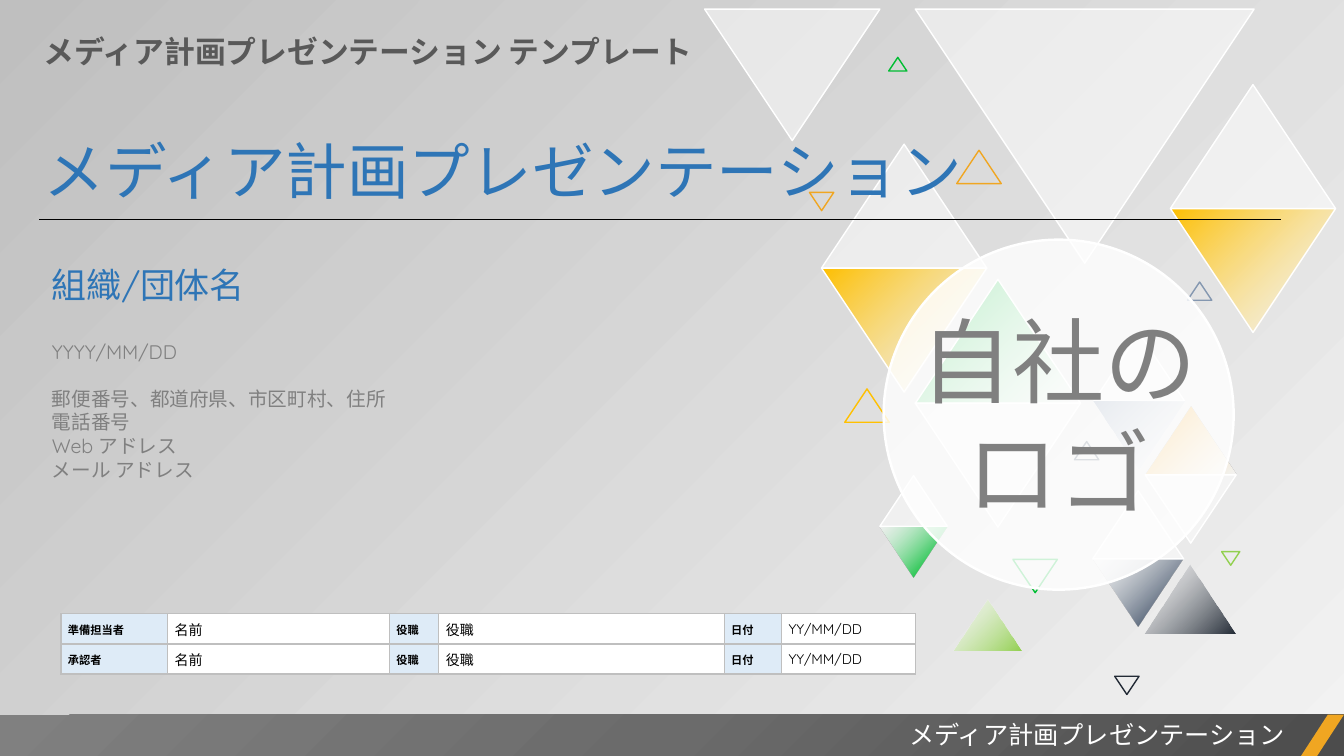
from dataclasses import dataclass

from lxml.etree import SubElement
from pptx import Presentation
from pptx.dml.color import RGBColor
from pptx.enum.shapes import MSO_CONNECTOR, MSO_SHAPE
from pptx.enum.text import MSO_ANCHOR, MSO_AUTO_SIZE, PP_ALIGN
from pptx.oxml.ns import qn
from pptx.util import Pt

TRIANGLE = MSO_SHAPE.ISOSCELES_TRIANGLE
RECT = MSO_SHAPE.RECTANGLE
SLANT = MSO_SHAPE.PARALLELOGRAM
OVAL = MSO_SHAPE.OVAL
STRAIGHT = MSO_CONNECTOR.STRAIGHT
MIDDLE = MSO_ANCHOR.MIDDLE
GROW = MSO_AUTO_SIZE.SHAPE_TO_FIT_TEXT
LEFT, CENTER, RIGHT = PP_ALIGN.LEFT, PP_ALIGN.CENTER, PP_ALIGN.RIGHT

FONT = "Quicksand"
WHITE, BLACK, GRAY, BLUE = "FFFFFF", "000000", "808080", "2E75B6"
GOLD, GREEN, AMBER, LIME = "FFC000", "00BD32", "F0A622", "92D050"
NAVY, SLATE, STEEL = "222A35", "44546A", "8497B0"


@dataclass
class Stop:
    pos: int
    tone: str
    alpha: int = 100


@dataclass
class Tri:
    x: float
    y: float
    width: float
    down: bool
    paint: tuple = ()
    edge: str = ""


@dataclass
class Line:
    text: str
    size: float
    tone: str
    bold: bool = False
    align: int = LEFT
    gap: float = 0


def color(tone: str) -> RGBColor:
    return RGBColor.from_string(tone)


def fade(tone: str) -> tuple:
    return Stop(0, tone), Stop(100, WHITE, 50)


def rise(tone: str) -> tuple:
    return Stop(0, WHITE, 50), Stop(82, tone)


def dim(node, alpha: int) -> None:
    if alpha < 100:
        SubElement(node, qn("a:alpha"), val=str(alpha * 1000))


def blend(fill, root, stops: tuple, radial: bool = False) -> None:
    fill.gradient()
    grad = next(root.iter(qn("a:gradFill")))
    for child in list(grad):
        grad.remove(child)
    group = SubElement(grad, qn("a:gsLst"))
    for stop in stops:
        node = SubElement(group, qn("a:gs"), pos=str(stop.pos * 1000))
        dim(SubElement(node, qn("a:srgbClr"), val=stop.tone), stop.alpha)
    if radial:
        way = SubElement(grad, qn("a:path"), path="circle")
        SubElement(way, qn("a:fillToRect"), l="100000", t="100000")
    else:
        SubElement(grad, qn("a:lin"), ang=str(225 * 60000), scaled="0")


def draw(slide, kind, x: float, y: float, width: float, height: float,
         paint: tuple, edge: str = "", weight: float = 1, radial: bool = False):
    shape = slide.shapes.add_shape(kind, Pt(x), Pt(y), Pt(width), Pt(height))
    shape.shadow.inherit = False
    if len(paint) > 1:
        blend(shape.fill, shape.element, paint, radial)
    elif paint:
        shape.fill.solid()
        shape.fill.fore_color.rgb = color(paint[0].tone)
        dim(next(shape.element.iter(qn("a:srgbClr"))), paint[0].alpha)
    else:
        shape.fill.background()
    if edge:
        shape.line.color.rgb = color(edge)
        shape.line.width = Pt(weight)
    else:
        shape.line.fill.background()
    return shape


def write(frame, lines: list[Line]) -> None:
    for i, line in enumerate(lines):
        para = frame.add_paragraph() if i else frame.paragraphs[0]
        para.text = line.text
        para.alignment = line.align
        para.space_before = Pt(line.gap)
        para.font.name = FONT
        para.font.size = Pt(line.size)
        para.font.bold = line.bold
        para.font.color.rgb = color(line.tone)


def label(slide, x: float, y: float, width: float, height: float, lines: list[Line]) -> None:
    frame = slide.shapes.add_textbox(Pt(x), Pt(y), Pt(width), Pt(height)).text_frame
    frame.word_wrap = True
    frame.auto_size = GROW
    write(frame, lines)


def border(cell) -> None:
    props = cell._tc.get_or_add_tcPr()
    for side in ("lnL", "lnR", "lnT", "lnB"):
        rule = SubElement(props, qn(f"a:{side}"), w=str(Pt(1)))
        SubElement(SubElement(rule, qn("a:solidFill")), qn("a:srgbClr"), val="BFBFBF")


def sheet(slide, rows: list[tuple], widths: list[float]) -> None:
    table = slide.shapes.add_table(len(rows), len(widths), Pt(43.5), Pt(438.5),
                                   Pt(sum(widths)), Pt(43)).table
    table.first_row = table.horz_banding = False
    for column, width in zip(table.columns, widths):
        column.width = Pt(width)
    for r, row in enumerate(rows):
        table.rows[r].height = Pt(21.5)
        for c, text in enumerate(row):
            cell, head = table.cell(r, c), c % 2 == 0
            border(cell)
            cell.fill.solid()
            cell.fill.fore_color.rgb = color("DEEBF7" if head else WHITE)
            cell.vertical_anchor = MIDDLE
            cell.margin_left = cell.margin_right = Pt(5)
            cell.margin_top = cell.margin_bottom = 0
            write(cell.text_frame, [Line(text, 8 if head else 10, BLACK, head)])
            cell.text_frame.paragraphs[0].line_spacing = 1.07


GLASS = (Stop(0, WHITE, 50),)
TRIS = [
    Tri(586.8, 103, 118, False, GLASS, WHITE),
    Tri(586.8, 191.5, 118, True, fade(GOLD), WHITE),
    Tri(653.8, 199.5, 118, False, rise(GREEN), WHITE),
    Tri(653.8, 288, 118, True, GLASS, WHITE),
    Tri(653.8, 6.5, 242, True, GLASS, WHITE),
    Tri(817.5, 403.5, 65, False, fade(NAVY)),
    Tri(780.5, 399, 65, True, rise(SLATE)),
    Tri(780.5, 350.5, 65, False, GLASS, WHITE),
    Tri(781.2, 237.8, 65, False, GLASS, WHITE),
    Tri(781.2, 286.5, 65, True, fade(STEEL)),
    Tri(818, 290.5, 65, False, rise(AMBER)),
    Tri(818, 339.2, 65, True, GLASS, WHITE),
    Tri(681.2, 428.5, 48.2, False, fade(LIME)),
    Tri(628.5, 376, 48.2, True, rise(GREEN)),
    Tri(628.5, 339.8, 48.2, False, GLASS, WHITE),
    Tri(836, 60.5, 118, False, GLASS, WHITE),
    Tri(836, 149, 118, True, fade(GOLD), WHITE),
    Tri(723.5, 399.5, 31.8, True, edge=GREEN),
    Tri(603.4, 277.8, 31.8, False, edge=GOLD),
    Tri(767.5, 315.4, 17.4, False, edge=SLATE),
    Tri(796.2, 483, 17.4, True, edge=NAVY),
    Tri(578.2, 137.4, 17.4, True, edge=AMBER),
    Tri(848.2, 201.5, 17.4, False, edge=STEEL),
    Tri(634.8, 41, 13, False, edge=GREEN),
    Tri(872.6, 394, 13, True, edge=LIME),
    Tri(683.4, 107.3, 31.8, False, edge=AMBER),
    Tri(503.3, 6.5, 125.2, True, GLASS, WHITE),
]
TITLE = "メディア計画プレゼンテーション"
INFO = [
    Line("組織/団体名", 25, BLUE),
    Line("YYYY/MM/DD", 14, GRAY, gap=24),
    Line("郵便番号、都道府県、市区町村、住所", 14, GRAY, gap=17),
    *(Line(text, 14, GRAY) for text in ("電話番号", "Web アドレス", "メール アドレス")),
]
ROWS = [(who, "名前", "役職", "役職", "日付", "YY/MM/DD") for who in ("準備担当者", "承認者")]


def main() -> None:
    deck = Presentation()
    deck.slide_width, deck.slide_height = Pt(960), Pt(540)
    slide = deck.slides.add_slide(deck.slide_layouts[6])
    blend(slide.background.fill, slide.element, (Stop(0, "F2F2F2", 40), Stop(100, "BFBFBF")))
    for tri in TRIS:
        shape = draw(slide, TRIANGLE, tri.x, tri.y, tri.width, tri.width * 0.75, tri.paint, tri.edge)
        shape.rotation = 180 if tri.down else 0
    label(slide, 24, 20, 652, 34, [Line(TITLE + " テンプレート", 22, "595959", True)])
    draw(slide, RECT, 0, 510.5, 960, 30,
         (Stop(0, "4C4C4C"), Stop(50, "6B6B6B"), Stop(100, GRAY)), radial=True)
    slash = draw(slide, SLANT, 929, 510.5, 31, 30, (Stop(0, AMBER),))
    slash.adjustments[0] = 0.65
    label(slide, 378, 510, 547, 29, [Line(TITLE, 18, WHITE, align=RIGHT)])
    label(slide, 24, 91.5, 904, 60.5, [Line(TITLE, 44, BLUE)])
    label(slide, 30, 185, 654, 163.5, INFO)
    rule = slide.shapes.add_connector(STRAIGHT, Pt(28), Pt(157), Pt(915), Pt(157))
    rule.line.color.rgb = color(BLACK)
    rule.line.width = Pt(0.5)
    SubElement(rule.element.spPr, qn("a:effectLst"))
    logo = draw(slide, OVAL, 631.2, 171.2, 250, 250, (Stop(0, WHITE, 81),), WHITE, 1.75)
    frame = logo.text_frame
    frame.word_wrap = False
    frame.vertical_anchor = MIDDLE
    frame.margin_left = frame.margin_right = frame.margin_top = frame.margin_bottom = 0
    write(frame, [Line(text, 66, GRAY, align=CENTER) for text in ("自社の", "ロゴ")])
    sheet(slide, ROWS, [76.3, 158.4, 35.3, 203.8, 41, 95.8])
    deck.save("out.pptx")


if __name__ == "__main__":
    main()
